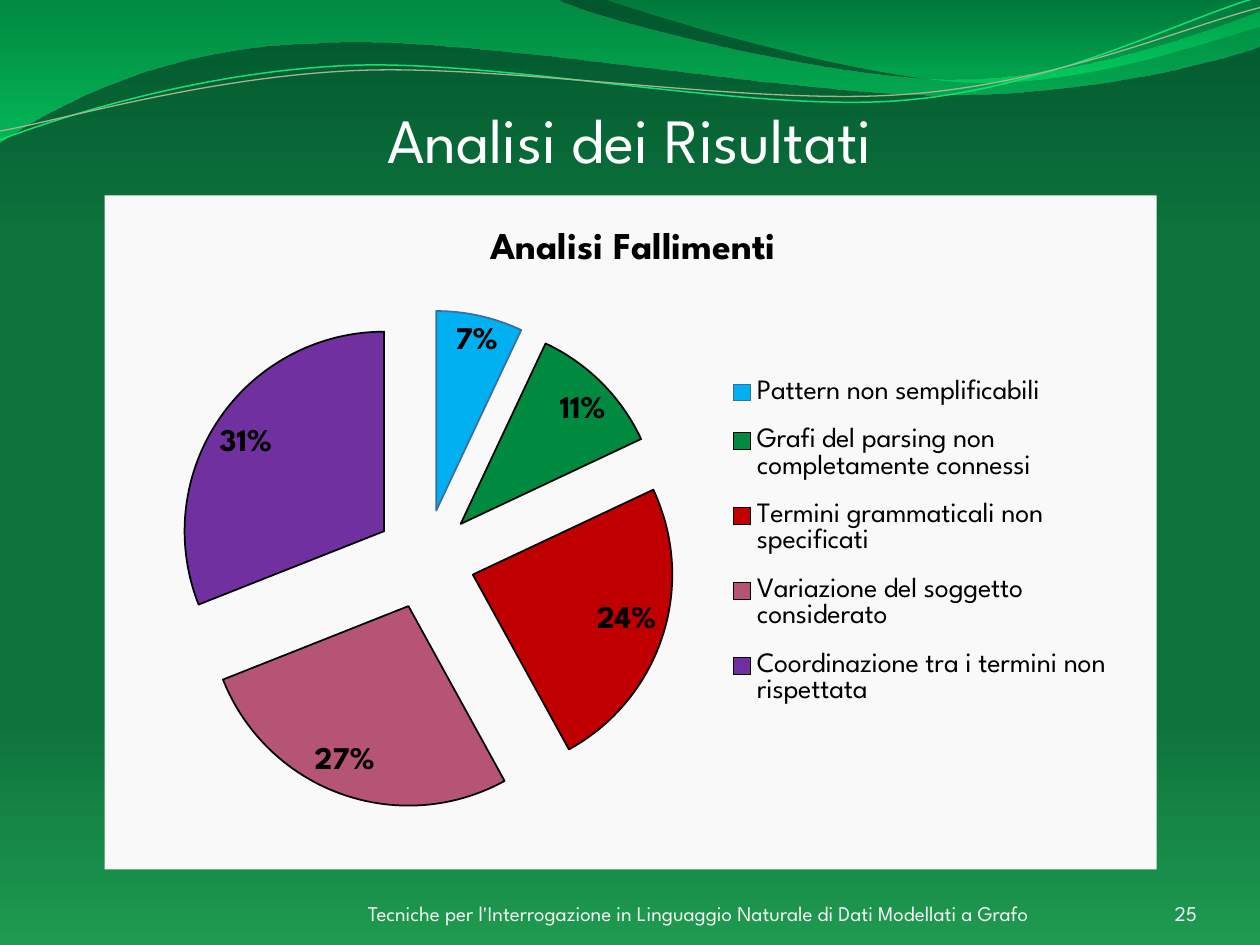
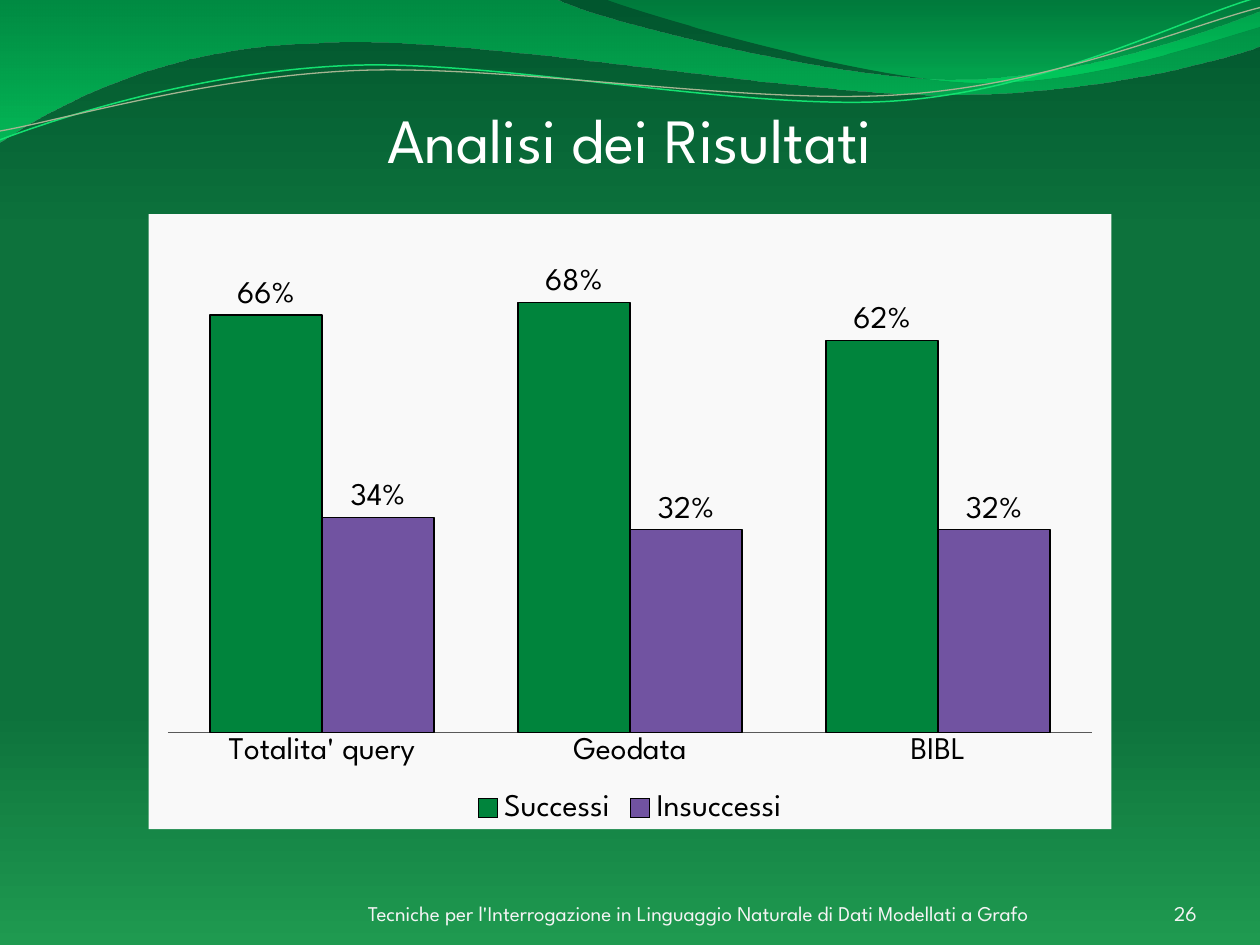
from lxml import etree
from pptx import Presentation
from pptx.chart.data import CategoryChartData
from pptx.dml.color import RGBColor
from pptx.enum.chart import XL_CHART_TYPE, XL_LABEL_POSITION, XL_LEGEND_POSITION, XL_TICK_MARK
from pptx.enum.text import MSO_ANCHOR, PP_ALIGN
from pptx.oxml.ns import qn
from pptx.util import Pt

PX = 9144  # EMU per px, 100 px to the inch
PIE, COLUMN = XL_CHART_TYPE.PIE, XL_CHART_TYPE.COLUMN_CLUSTERED
BEST_FIT, OUT_END = XL_LABEL_POSITION.BEST_FIT, XL_LABEL_POSITION.OUTSIDE_END
AT_RIGHT, AT_BOTTOM = XL_LEGEND_POSITION.RIGHT, XL_LEGEND_POSITION.BOTTOM
NO_TICK = XL_TICK_MARK.NONE
LEFT, CENTER, RIGHT = PP_ALIGN.LEFT, PP_ALIGN.CENTER, PP_ALIGN.RIGHT
MIDDLE, BOTTOM = MSO_ANCHOR.MIDDLE, MSO_ANCHOR.BOTTOM

FONT = "League Spartan"
WHITE = RGBColor(0xFF, 0xFF, 0xFF)
PALE = RGBColor(0xF4, 0xF4, 0xF4)
PANEL = RGBColor(0xF9, 0xF9, 0xF9)
BLACK = RGBColor(0, 0, 0)
GREY = RGBColor(0x59, 0x59, 0x59)
NIGHT = RGBColor(0x01, 0x56, 0x2E)
FOREST = RGBColor(0x0D, 0x72, 0x3C)
LEAF = RGBColor(0x1F, 0x9A, 0x50)
JADE = RGBColor(0x00, 0xCC, 0x5C)
MINT = RGBColor(0x00, 0xFA, 0x71)
LIME = RGBColor(0x00, 0xF4, 0x6E)
NEON = RGBColor(0x13, 0xE1, 0x70)
SAGE = RGBColor(0xA5, 0xB5, 0x92)
STEEL = RGBColor(0x3A, 0x6E, 0xA5)
SKY = RGBColor(0x00, 0xB0, 0xF0)
GREEN = RGBColor(0x00, 0x8A, 0x3F)
RED = RGBColor(0xC0, 0x00, 0x00)
ROSE = RGBColor(0xB5, 0x54, 0x75)
PURPLE = RGBColor(0x70, 0x30, 0xA0)
PINE = RGBColor(0x00, 0x84, 0x3C)
VIOLET = RGBColor(0x71, 0x53, 0xA1)

TITLE = "Analisi dei Risultati"
FOOTER = "Tecniche per l'Interrogazione in Linguaggio Naturale di Dati Modellati a Grafo"

# Gradient stops: position, colour, opacity in percent
BACK = [(0, NIGHT, 100), (25, FOREST, 100), (75, FOREST, 100), (100, LEAF, 100)]
# A step of two numbers is a line, one of six a Bézier curve
WAVES = [
    ([(0, 0), (440, -1), (476, 17, 664, 63, 758, 63), (853, 63, 958, 26, 1000, 9),
      (1001, 36), (983, 44, 870, 76, 746, 75), (622, 75, 382, 28, 257, 34),
      (129, 36, 46, 83, -1, 113)],
     [(0, JADE, 45), (100, MINT, 55)]),
    ([(479, -1), (509, 11, 682, 62, 769, 65), (856, 69, 961, 32, 1000, 21), (1000, 0)],
     [(0, JADE, 30), (80, LIME, 45)]),
]
STRANDS = [
    ([(0, 111), (48, 93, 158, 57, 277, 52), (395, 47, 593, 89, 713, 80),
      (833, 71, 938, 15, 998, -2)], NEON, 0.85),
    ([(0, 104), (47, 96, 164, 61, 283, 56), (403, 51, 597, 84, 717, 75),
      (836, 67, 941, 21, 1000, 6)], SAGE, 0.75),
]


def apply(item, values):
    for name, value in values.items():
        setattr(item, name, value)


def bend(root, steps):
    """Join each three lines that stand for a curve into one Bézier."""
    lines = iter(root.findall(".//" + qn("a:lnTo")))
    for step in steps:
        line = next(lines)
        if len(step) == 6:
            line.tag = qn("a:cubicBezTo")
            for _ in range(2):
                more = next(lines)
                line.append(more[0])
                more.getparent().remove(more)


def shade(fill, root, stops):
    """Give a fill a gradient that runs from top to bottom."""
    fill.gradient()
    grad = root.find(".//" + qn("a:gradFill"))
    for child in list(grad):
        grad.remove(child)
    group = etree.SubElement(grad, qn("a:gsLst"))
    for pos, color, alpha in stops:
        stop = etree.SubElement(group, qn("a:gs"), pos=str(pos * 1000))
        tint = etree.SubElement(stop, qn("a:srgbClr"), val=str(color))
        etree.SubElement(tint, qn("a:alpha"), val=str(alpha * 1000))
    etree.SubElement(grad, qn("a:lin"), ang="5400000", scaled="0")


def place(parent, index, box, inner=False):
    """Set a chart part's place as fractions of the chart."""
    for old in parent.findall(qn("c:layout")):
        parent.remove(old)
    layout = etree.Element(qn("c:layout"))
    manual = etree.SubElement(layout, qn("c:manualLayout"))
    if inner:
        etree.SubElement(manual, qn("c:layoutTarget"), val="inner")
    for name in ("xMode", "yMode"):
        etree.SubElement(manual, qn("c:" + name), val="edge")
    for name, value in zip("xywh", box):
        etree.SubElement(manual, qn("c:" + name), val=str(value))
    parent.insert(index, layout)


def paint(item, color, edge, width):
    item.format.fill.solid()
    item.format.fill.fore_color.rgb = color
    item.format.line.color.rgb = edge
    item.format.line.width = Pt(width)


def ink(font, size, color, bold=None):
    apply(font, {"name": FONT, "size": Pt(size), "bold": bold})
    font.color.rgb = color


class Deck:
    def __init__(self):
        self.prs = Presentation()
        apply(self.prs, {"slide_width": 1000 * PX, "slide_height": 750 * PX})
        self.slide = None

    def page(self, number):
        """Start a slide with the shared background, waves, title and footer."""
        self.slide = self.prs.slides.add_slide(self.prs.slide_layouts[6])
        shade(self.slide.background.fill, self.slide.element, BACK)
        for path, stops in WAVES:
            wave = self.curve(path, True)
            shade(wave.fill, wave.element, stops)
            wave.line.fill.background()
        for path, color, width in STRANDS:
            strand = self.curve(path, False)
            strand.fill.background()
            strand.line.color.rgb = color
            strand.line.width = Pt(width)
        self.text((50, 77, 900, 79), TITLE, 36, WHITE, CENTER, MIDDLE, 5, 19)
        self.text((292, 695, 646, 40), FOOTER, 12, PALE, LEFT, BOTTOM)
        self.text((867, 695, 83, 40), str(number), 12, PALE, RIGHT, BOTTOM)

    def curve(self, path, close):
        start, *steps = path
        points = [step[i:i + 2] for step in steps for i in range(0, len(step), 2)]
        pen = self.slide.shapes.build_freeform(*start, scale=PX)
        pen.add_line_segments(points, close=close)
        shape = pen.convert_to_shape()
        bend(shape.element, steps)
        shape.shadow.inherit = False
        return shape

    def text(self, box, words, size, color, align, anchor, top=0, foot=0):
        frame = self.slide.shapes.add_textbox(*(n * PX for n in box)).text_frame
        apply(frame, {"word_wrap": True, "vertical_anchor": anchor, "margin_left": 0,
                      "margin_right": 0, "margin_top": top * PX, "margin_bottom": foot * PX})
        line = frame.paragraphs[0]
        line.alignment = align
        run = line.add_run()
        run.text = words
        ink(run.font, size, color)

    def chart(self, kind, box, cats, rows, legend, size):
        """Add a chart on a pale panel; rows hold name and values."""
        data = CategoryChartData()
        data.categories = cats
        for name, values in rows:
            data.add_series(name, values)
        chart = self.slide.shapes.add_chart(kind, *(n * PX for n in box), data).chart
        ink(chart.font, 18, BLACK)
        apply(chart, {"has_title": False, "has_legend": True})
        apply(chart.legend, {"position": legend, "include_in_layout": False})
        ink(chart.legend.font, size, BLACK)
        panel = etree.Element(qn("c:spPr"))
        fill = etree.SubElement(panel, qn("a:solidFill"))
        etree.SubElement(fill, qn("a:srgbClr"), val=str(PANEL))
        edge = etree.SubElement(panel, qn("a:ln"))
        etree.SubElement(edge, qn("a:noFill"))
        chart.element.find(qn("c:chart")).addnext(panel)
        return chart

    def labels(self, plot, values, bold=None):
        plot.has_data_labels = True
        tags = plot.data_labels
        apply(tags, {"number_format": "0%", "number_format_is_linked": False, **values})
        ink(tags.font, 18, BLACK, bold)

    def pie(self, box, name, slices):
        """Add an exploded pie; slices hold label, value, colour and edge."""
        cats, values, colors, edges = zip(*slices)
        chart = self.chart(PIE, box, cats, [(name, values)], AT_RIGHT, 16)
        chart.has_title = True
        head = chart.chart_title.text_frame
        head.text = name
        ink(head.paragraphs[0].runs[0].font, 21.6, BLACK, True)
        root = chart.element.find(qn("c:chart"))
        place(root.find(qn("c:title")), 1, (0.36, 0.04))
        place(root.find(qn("c:plotArea")), 0, (0.03, 0.17, 0.55, 0.74), True)
        place(root.find(qn("c:legend")), 1, (0.58, 0.24, 0.39, 0.55))
        plot = chart.plots[0]
        plot.vary_by_categories = True
        series = plot.series[0]
        series.format.line.color.rgb = BLACK
        burst = etree.Element(qn("c:explosion"), val="25")
        root.find(".//" + qn("c:ser")).find(qn("c:spPr")).addnext(burst)
        for i, (color, edge) in enumerate(zip(colors, edges)):
            paint(series.points[i], color, edge, 1)
        self.labels(plot, {"show_percentage": True, "show_value": False,
                           "position": BEST_FIT}, True)

    def bars(self, box, cats, rows):
        """Add clustered columns; rows hold name, values and colour."""
        chart = self.chart(COLUMN, box, cats, [row[:2] for row in rows], AT_BOTTOM, 18)
        plot = chart.plots[0]
        apply(plot, {"gap_width": 75, "overlap": 0, "vary_by_categories": False})
        for series, row in zip(plot.series, rows):
            paint(series, row[2], BLACK, 0.75)
        self.labels(plot, {"show_value": True, "position": OUT_END})
        apply(chart.value_axis, {"visible": False, "has_major_gridlines": False})
        axis = chart.category_axis
        apply(axis, {"major_tick_mark": NO_TICK, "minor_tick_mark": NO_TICK})
        axis.format.line.color.rgb = GREY


def main():
    deck = Deck()
    deck.page(25)
    deck.pie((83, 155, 835, 535), "Analisi Fallimenti", [
        ("Pattern non semplificabili", 7, SKY, STEEL),
        ("Grafi del parsing non completamente connessi", 11, GREEN, BLACK),
        ("Termini grammaticali non specificati", 24, RED, BLACK),
        ("Variazione del soggetto considerato", 27, ROSE, BLACK),
        ("Coordinazione tra i termini non rispettata", 31, PURPLE, BLACK),
    ])
    deck.page(26)
    deck.bars((118, 170, 764, 488), ["Totalita' query", "Geodata", "BIBL"], [
        ("Successi", (0.66, 0.68, 0.62), PINE),
        ("Insuccessi", (0.34, 0.32, 0.32), VIOLET),
    ])
    deck.prs.save("out.pptx")


if __name__ == "__main__":
    main()
